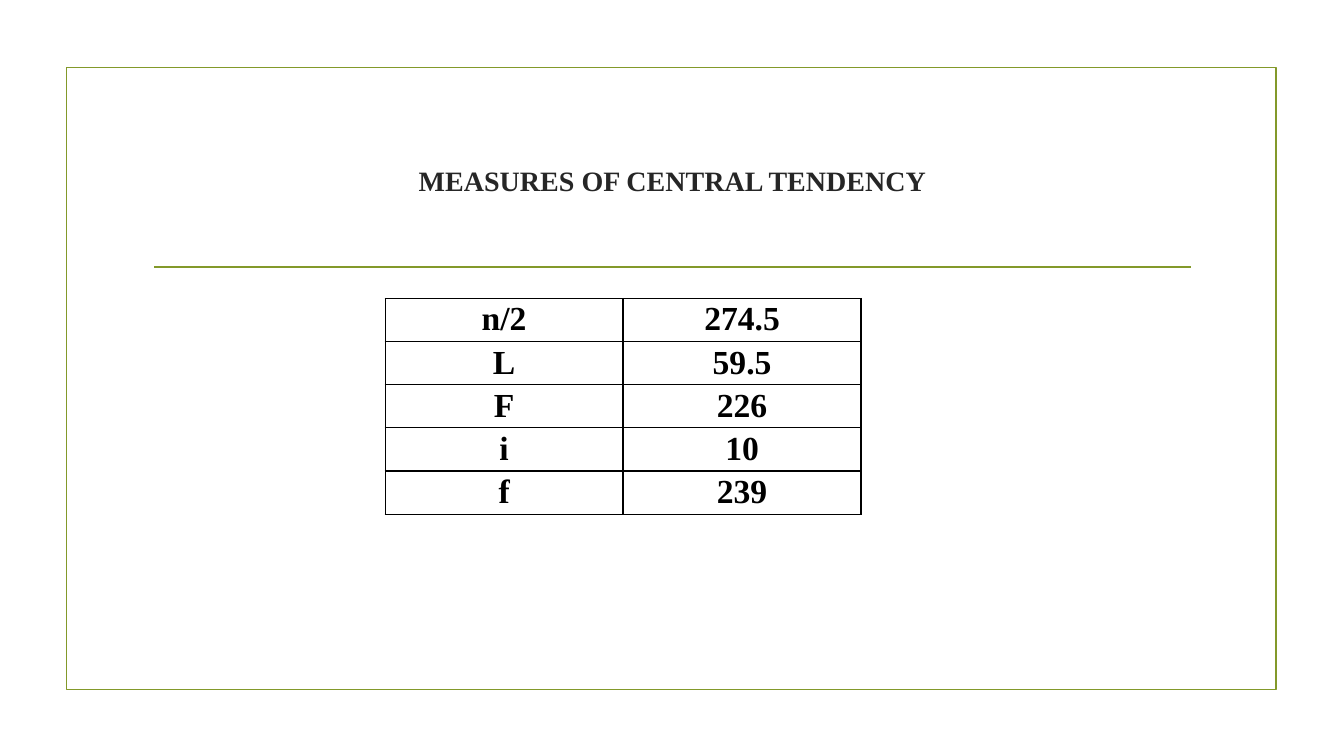
from lxml import etree
from pptx import Presentation
from pptx.dml.color import RGBColor
from pptx.enum.shapes import MSO_CONNECTOR, MSO_SHAPE
from pptx.enum.text import MSO_ANCHOR, PP_ALIGN
from pptx.oxml.ns import qn
from pptx.util import Inches, Pt

RECT = MSO_SHAPE.RECTANGLE
STRAIGHT = MSO_CONNECTOR.STRAIGHT
CENTER = PP_ALIGN.CENTER
MIDDLE = MSO_ANCHOR.MIDDLE

MEDIAN_TERMS = [
    ("n/2", "274.5"),
    ("L", "59.5"),
    ("F", "226"),
    ("i", "10"),
    ("f", "239"),
]


def color(value):
    return RGBColor.from_string(value)


class SlideBuilder:
    font = "Times New Roman"
    accent = "83992A"
    title_color = "262626"
    ink = "000000"
    line_width = Pt(1.25)

    def __init__(self, slide):
        self.s = slide

    def style_line(self, line):
        line.color.rgb = color(self.accent)
        line.width = self.line_width

    def frame(self, x, y, w, h):
        sp = self.s.shapes.add_shape(RECT, Inches(x), Inches(y), Inches(w), Inches(h))
        sp.shadow.inherit = False
        sp.fill.background()
        self.style_line(sp.line)

    def rule(self, x1, x2, y):
        cxn = self.s.shapes.add_connector(STRAIGHT, Inches(x1), Inches(y), Inches(x2), Inches(y))
        self.style_line(cxn.line)
        etree.SubElement(cxn._element.spPr, qn("a:effectLst"))

    def add_text(self, tf, text, size, ink):
        """Put one bold, centred run in the first paragraph."""
        p = tf.paragraphs[0]
        p.alignment = CENTER
        r = p.add_run()
        r.text = text
        r.font.name = self.font
        r.font.size = Pt(size)
        r.font.bold = True
        r.font.color.rgb = color(ink)
        return p

    def title(self, text, x, y, w, h):
        tf = self.s.shapes.add_textbox(Inches(x), Inches(y), Inches(w), Inches(h)).text_frame
        tf.word_wrap = True
        tf.vertical_anchor = MIDDLE
        self.add_text(tf, text, 20, self.title_color)

    def cell_borders(self, cell):
        tc_pr = cell._tc.get_or_add_tcPr()
        for side in ("lnL", "lnR", "lnT", "lnB"):
            ln = etree.SubElement(tc_pr, qn(f"a:{side}"), w=str(Pt(1)))
            fill = etree.SubElement(ln, qn("a:solidFill"))
            etree.SubElement(fill, qn("a:srgbClr"), val=self.ink)

    def table(self, rows, x, y, w, h):
        shape = self.s.shapes.add_table(len(rows), len(rows[0]), Inches(x), Inches(y), Inches(w), Inches(h))
        tbl = shape.table
        tbl.first_row = False
        tbl.horz_banding = False
        for i, row in enumerate(rows):
            for j, text in enumerate(row):
                cell = tbl.cell(i, j)
                cell.margin_left = cell.margin_right = Inches(0.06)
                cell.margin_top = cell.margin_bottom = 0
                self.cell_borders(cell)
                cell.fill.background()
                p = self.add_text(cell.text_frame, text, 24, self.ink)
                p.line_spacing = 1.07


def main():
    prs = Presentation()
    prs.slide_width = Inches(13.33)
    prs.slide_height = Inches(7.5)
    b = SlideBuilder(prs.slides.add_slide(prs.slide_layouts[6]))
    b.frame(0.66, 0.67, 12, 6.17)
    b.rule(1.53, 11.81, 2.65)
    b.title("MEASURES OF CENTRAL TENDENCY", 1.42, 1.07, 10.5, 1.43)
    b.table(MEDIAN_TERMS, 3.82, 2.96, 4.72, 2.07)
    prs.save("out.pptx")


if __name__ == "__main__":
    main()
